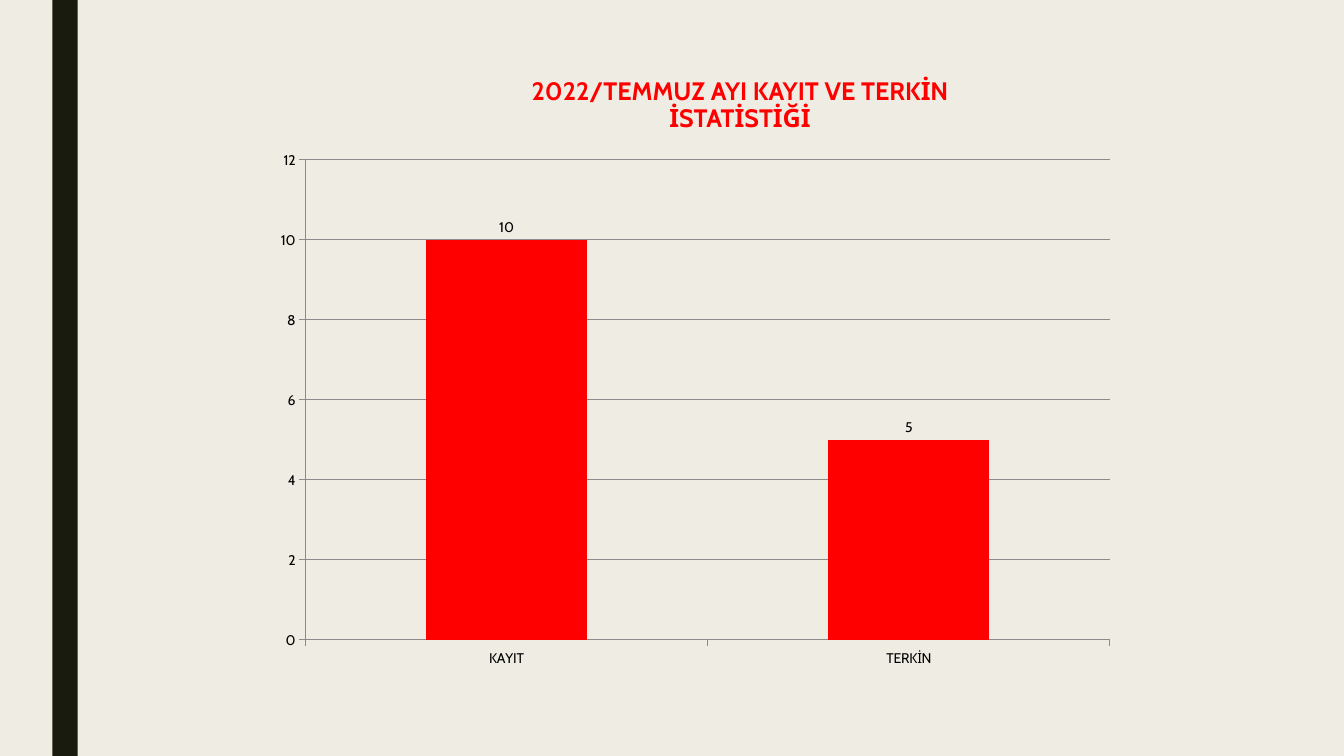
from lxml import etree
from pptx import Presentation
from pptx.chart.data import CategoryChartData
from pptx.dml.color import RGBColor
from pptx.enum.chart import XL_CHART_TYPE as Kind, XL_LABEL_POSITION as Pos
from pptx.enum.chart import XL_TICK_MARK as Tick
from pptx.enum.shapes import MSO_SHAPE as Shape
from pptx.enum.text import MSO_ANCHOR as Anchor, PP_ALIGN as Align
from pptx.oxml.ns import qn
from pptx.util import Inches, Pt

WIDE, HIGH = 13.33, 7.5
FONT = "Cabin"
PAPER, DARK, RED, BLACK, GREY = "EFEDE3", "191B0E", "FF0000", "000000", "8B8B8B"


def paint(part, color):
    part.solid()
    part.fore_color.rgb = RGBColor.from_string(color)


def style(font, size, color, bold=False):
    font.name, font.size, font.bold = FONT, Pt(size), bold
    font.color.rgb = RGBColor.from_string(color)


def add_band(slide, box):
    band = slide.shapes.add_shape(Shape.RECTANGLE, *map(Inches, box))
    band.shadow.inherit = False
    paint(band.fill, DARK)
    band.line.fill.background()


def add_title(slide, box, text):
    title = slide.shapes.title
    title.left, title.top, title.width, title.height = map(Inches, box)
    frame = title.text_frame
    frame.word_wrap = True
    frame.vertical_anchor = Anchor.TOP
    para = frame.paragraphs[0]
    para.alignment, para.line_spacing = Align.CENTER, 0.89
    run = para.add_run()
    run.text = text
    style(run.font, 18, RED, True)


def fix_plot(chart, **shares):
    """Pin the inner plot area to shares of the chart's size."""
    area = chart._chartSpace.chart.plotArea
    for old in area.findall(qn("c:layout")):
        area.remove(old)
    layout = etree.Element(qn("c:layout"))
    area.insert(0, layout)
    manual = etree.SubElement(layout, qn("c:manualLayout"))
    rules = dict(layoutTarget="inner", xMode="edge", yMode="edge", **shares)
    for name, value in rules.items():
        etree.SubElement(manual, qn(f"c:{name}")).set("val", str(value))


def add_bars(slide, box, counts):
    data = CategoryChartData()
    data.categories = list(counts)
    data.add_series("Series 1", list(counts.values()))
    chart = slide.shapes.add_chart(
        Kind.COLUMN_CLUSTERED, *map(Inches, box), data).chart
    chart.has_legend = chart.has_title = False
    style(chart.font, 10, BLACK)
    fix_plot(chart, x=0.05, y=0.035, w=0.93, h=0.895)

    plot = chart.plots[0]
    plot.gap_width, plot.vary_by_categories = 150, False
    paint(plot.series[0].format.fill, RED)
    plot.has_data_labels = True
    labels = plot.data_labels
    labels.show_value, labels.position = True, Pos.OUTSIDE_END
    style(labels.font, 10, BLACK)

    rows = chart.value_axis
    rows.minimum_scale, rows.maximum_scale, rows.major_unit = 0, 12, 2
    rows.has_major_gridlines = True
    for axis in (chart.category_axis, rows):
        axis.major_tick_mark, axis.minor_tick_mark = Tick.OUTSIDE, Tick.NONE
        style(axis.tick_labels.font, 10, BLACK)
    for part in (chart.category_axis, rows, rows.major_gridlines):
        paint(part.format.line.fill, GREY)
        part.format.line.width = Pt(0.75)


def main():
    deck = Presentation()
    deck.slide_width, deck.slide_height = Inches(WIDE), Inches(HIGH)
    slide = deck.slides.add_slide(deck.slide_layouts[5])
    paint(slide.background.fill, PAPER)
    add_band(slide, (0.52, 0, 0.25, HIGH))
    add_title(slide, (4.45, 0.73, 5.78, 0.52),
              "2022/TEMMUZ AYI KAYIT VE TERKİN İSTATİSTİĞİ")
    add_bars(slide, (2.6, 1.4, 8.58, 5.32), {"KAYIT": 10, "TERKİN": 5})
    deck.save("out.pptx")


if __name__ == "__main__":
    main()
